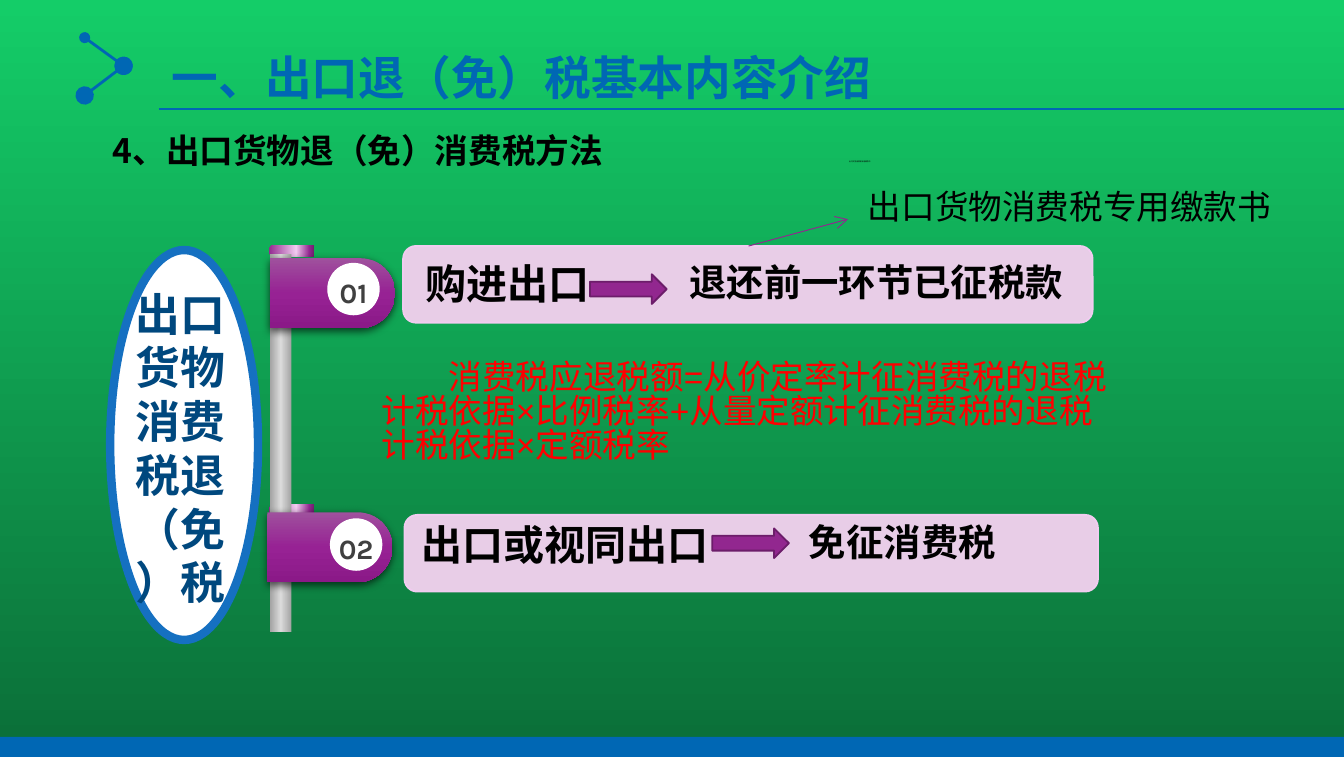
from math import cos, pi, sin

from lxml import etree
from pptx import Presentation
from pptx.dml.color import RGBColor
from pptx.enum.lang import MSO_LANGUAGE_ID
from pptx.enum.shapes import MSO_CONNECTOR, MSO_SHAPE
from pptx.enum.text import MSO_ANCHOR, PP_ALIGN
from pptx.oxml.ns import qn
from pptx.util import Inches, Pt

RECT, ROUNDED = MSO_SHAPE.RECTANGLE, MSO_SHAPE.ROUNDED_RECTANGLE
OVAL, ARROW = MSO_SHAPE.OVAL, MSO_SHAPE.RIGHT_ARROW
STRAIGHT = MSO_CONNECTOR.STRAIGHT
LEFT, CENTER = PP_ALIGN.LEFT, PP_ALIGN.CENTER
TOP, MIDDLE = MSO_ANCHOR.TOP, MSO_ANCHOR.MIDDLE
CHINESE = MSO_LANGUAGE_ID.SIMPLIFIED_CHINESE

# The slide is a grid of 100 columns by 56.3 rows of square cells
COLUMNS, ROWS = 100, 56.3
CELL = Inches(10) / COLUMNS
BLUE, PURPLE, BLACK, WHITE = "0067B4", "92278F", "000000", "FFFFFF"
CJK = "Noto Sans CJK SC"
TAB_STOPS = [(0, PURPLE), (60, "F1CCF0"), (89, PURPLE), (100, "6D1D6B")]
POLE_STOPS = [(0, "A3A3A3"), (50, "DBDBDB"), (100, "A3A3A3")]
FLAG_STOPS = [(0, "9F519D"), (50, "972294"), (100, "8B1988")]


def cells(*values):
    return [round(value * CELL) for value in values]


def color(value):
    return RGBColor.from_string(value)


def child(parent, tag, **attributes):
    element = etree.SubElement(parent, qn(tag))
    for name, value in attributes.items():
        element.set(name, str(value))
    return element


def set_gradient(fill, holder, stops, angle):
    fill.gradient()
    gradient = next(holder.iter(qn("a:gradFill")))
    for part in list(gradient):
        gradient.remove(part)
    stop_list = child(gradient, "a:gsLst")
    for position, value in stops:
        stop = child(stop_list, "a:gs", pos=position * 1000)
        child(stop, "a:srgbClr", val=value)
    child(gradient, "a:lin", ang=angle * 60000, scaled=0)


def add_block(page, kind, box, fill, line=None, width=1):
    block = page.shapes.add_shape(kind, *cells(*box))
    block.shadow.inherit = False
    block.fill.solid()
    block.fill.fore_color.rgb = color(fill)
    if line:
        block.line.color.rgb = color(line)
        block.line.width = Pt(width)
    else:
        block.line.fill.background()
    return block


def add_capsule(page, box, side, stops, angle):
    """A bar whose end on the given side (1 right, -1 left) is a half circle."""
    left, top, width, height = box
    radius = height / 2
    flat, bend = (left, left + width - radius) if side > 0 else (left + width, left + radius)
    turns = [pi * step / 24 for step in range(25)]
    points = [(bend + side * radius * sin(turn), top + radius - radius * cos(turn))
              for turn in turns]
    builder = page.shapes.build_freeform(*cells(flat, top))
    builder.add_line_segments([cells(*point) for point in points + [(flat, top + height)]])
    capsule = builder.convert_to_shape()
    capsule.shadow.inherit = False
    capsule.line.fill.background()
    set_gradient(capsule.fill, capsule.element.spPr, stops, angle)
    return capsule


def add_line(page, start, end, value, width, head=None, tail=None):
    line = page.shapes.add_connector(STRAIGHT, *cells(*start, *end))
    line.line.color.rgb = color(value)
    line.line.width = Pt(width)
    outline = line.element.spPr.find(qn("a:ln"))
    for tag, mark in (("a:headEnd", head), ("a:tailEnd", tail)):
        if mark:
            child(outline, tag, type=mark[0], w=mark[1], len=mark[1])
    child(line.element.spPr, "a:effectLst")


def write(shape, text, size, value=BLACK, font="Arial", bold=True, align=LEFT,
          anchor=TOP, spacing=1.0, indent=0):
    frame = shape.text_frame
    frame.word_wrap = True
    frame.vertical_anchor = anchor
    frame.text = text
    para = frame.paragraphs[0]
    para.alignment = align
    para.line_spacing = spacing
    if indent:
        properties = para._p.get_or_add_pPr()
        properties.set("marL", "0")
        properties.set("indent", str(round(indent * CELL)))
    span = para.runs[0].font
    span.size, span.name, span.bold = Pt(size), font, bold
    span.color.rgb = color(value)
    span.language_id = CHINESE


def add_text(page, box, text, size, **style):
    write(page.shapes.add_textbox(*cells(*box)), text, size, **style)


def add_indented(page, box, text, size, spacing=24, **style):
    add_text(page, box, text, size, spacing=Pt(spacing), indent=5, **style)


def draw_header(page, box, title):
    left, top, width, height = box
    # Three joined dots
    dots = [(left, top), (left + 2.9, top + 2.1), (left, top + 4.3)]
    small, large = ("oval", "med"), ("oval", "lg")
    add_line(page, dots[0], dots[1], BLUE, 1.5, small, large)
    add_line(page, dots[1], dots[2], BLUE, 1.5, large, large)
    # Title above its rule
    rule = top + height
    add_line(page, (left + 5.5, rule), (left + width, rule), BLUE, 1)
    add_text(page, (left + 5.5, top + 0.1, width - 5.5, 6.2), title, 25,
             value=BLUE, anchor=MIDDLE, spacing=0.9)


def draw_topic(page, box, text):
    left, top, width, height = box
    add_block(page, OVAL, box, WHITE, "1570C1", 4.5)
    add_text(page, (left - 0.2, top + 2.2, width - 0.1, height - 3.7), text, 24,
             value="00487E", align=CENTER)


def draw_pole(page, box, tab_tops):
    left, top = box[:2]
    for tab_top in tab_tops:
        add_capsule(page, (left - 0.1, top + tab_top, 3.4, 0.9), -1, TAB_STOPS, 0)
    pole = add_block(page, RECT, box, WHITE)
    set_gradient(pole.fill, pole.element.spPr, POLE_STOPS, 0)


def draw_case(page, box, number, flag_at, badge_at, cause, cause_at,
              arrow_at, result, result_at, result_font):
    """A panel with its flag; each position is an offset from the panel's corner."""
    def at(offset, width, height):
        return box[0] + offset[0], box[1] + offset[1], width, height

    add_block(page, ROUNDED, box, "E8CDE7", "F1CCF0")
    # Flag with shadow
    flag = add_capsule(page, at(flag_at, 9.3, 5.2), 1, FLAG_STOPS, 90)
    effects = flag.element.spPr.find(qn("a:effectLst"))
    shadow = child(effects, "a:outerShdw", blurRad=Pt(4.5), dist=Pt(1.5),
                   dir=90 * 60000, rotWithShape=0)
    child(child(shadow, "a:srgbClr", val=BLACK), "a:alpha", val=63000)
    # Number badge
    badge = add_block(page, OVAL, at(badge_at, 3.8, 3.8), WHITE, WHITE, 0.75)
    frame = badge.text_frame
    frame.margin_left = frame.margin_right = frame.margin_top = frame.margin_bottom = 0
    write(badge, number, 15, value="404040", font="Karla", align=CENTER,
          anchor=MIDDLE, spacing=1.2)
    # Cause, arrow, result
    add_indented(page, at(cause_at, 44, 6), cause, 22)
    add_block(page, ARROW, at(arrow_at, 5.7, 2.2), PURPLE, "6C1D6A")
    add_indented(page, at(result_at, 38.2, 6), result, 20, font=result_font)


def draw_receipt(page, box, text):
    left, top, width, height = box
    add_line(page, (left - 2.9, top + 5.3), (left + 4.5, top + 3.3), PURPLE, 0.5,
             tail=("arrow", "med"))
    add_indented(page, (left - 1.4, top - 4.7, width, height), text, 1, bold=False)
    add_indented(page, box, text, 18, bold=False)


def main():
    deck = Presentation()
    deck.slide_width, deck.slide_height = cells(COLUMNS, ROWS)
    page = deck.slides.add_slide(deck.slide_layouts[6])
    set_gradient(page.background.fill, page.element, [(0, "14CD68"), (100, "0B6E38")], 90)

    draw_header(page, (6.3, 2.8, COLUMNS - 6.3, 5.3), "一、出口退（免）税基本内容介绍")
    # Footer band
    add_block(page, RECT, (0, 54.8, COLUMNS, ROWS - 54.8), BLUE)
    add_text(page, (7.4, 9.2, 38.5, 4), "4、出口货物退（免）消费税方法", 18, font=CJK)
    draw_topic(page, (8.2, 18.6, 11, 29), "出口货物消费税退（免）税")
    draw_pole(page, (20.1, 18.9, 1.6, 28.1), (-0.7, 18.6))
    draw_case(page, (30, 18.3, 51.3, 5.7), "01", (-9.9, 0.9), (-5.6, 1.3),
              "购进出口", (-4.3, 0.8), (13.9, 2.1),
              "退还前一环节已征税款", (15.3, 0.5), CJK)
    draw_case(page, (30.1, 38.3, 51.6, 5.7), "02", (-10.2, -0.2), (-5.5, 0.3),
              "出口或视同出口", (-4.7, 0.2), (22.9, 1),
              "免征消费税", (24.1, -0.2), "Arial")
    draw_receipt(page, (58.6, 13, 38.2, 6.7), "出口货物消费税专用缴款书")
    # Refund formula
    add_indented(page, (27.4, 26.5, 57, 9.1),
                 "消费税应退税额=从价定率计征消费税的退税计税依据×比例税率"
                 "+从量定额计征消费税的退税计税依据×定额税率",
                 18, spacing=18, value="FF0000", bold=False)
    deck.save("out.pptx")


if __name__ == "__main__":
    main()
